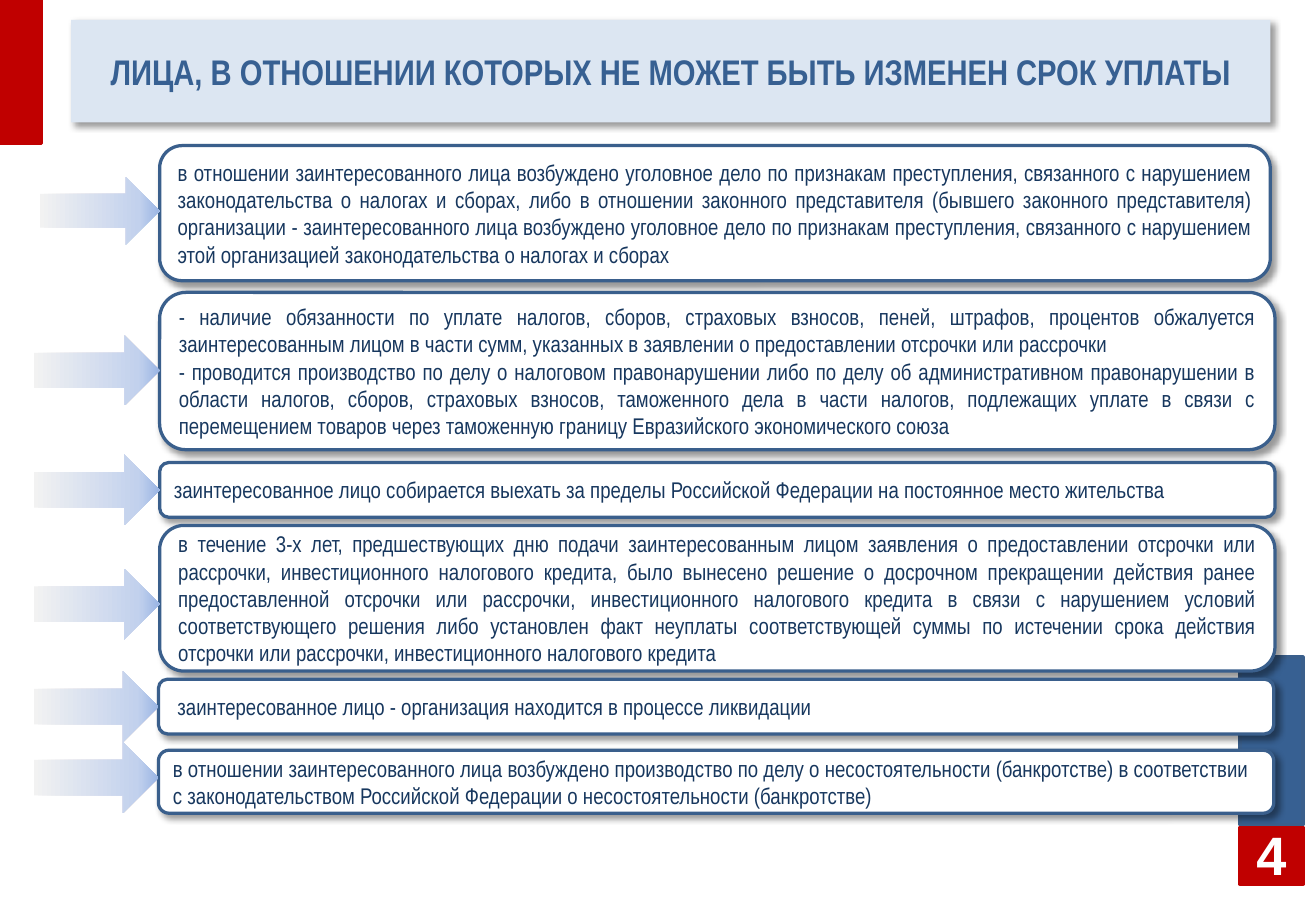
from dataclasses import dataclass

from lxml import etree
from pptx import Presentation
from pptx.dml.color import RGBColor
from pptx.enum.shapes import MSO_SHAPE
from pptx.enum.text import MSO_ANCHOR, MSO_AUTO_SIZE, PP_ALIGN
from pptx.oxml.ns import qn
from pptx.util import Emu, Pt

RECT, ROUND, ARROW = MSO_SHAPE.RECTANGLE, MSO_SHAPE.ROUNDED_RECTANGLE, MSO_SHAPE.RIGHT_ARROW
LEFT, CENTER, JUSTIFY = PP_ALIGN.LEFT, PP_ALIGN.CENTER, PP_ALIGN.JUSTIFY
MIDDLE, NO_FIT = MSO_ANCHOR.MIDDLE, MSO_AUTO_SIZE.NONE

# Content
TITLE = "ЛИЦА, В ОТНОШЕНИИ КОТОРЫХ НЕ МОЖЕТ БЫТЬ ИЗМЕНЕН СРОК УПЛАТЫ"
PAGE = "4"
# box (left, top, width, height), arrow (left, top, height), alignment, left inset, paragraphs
CASES = [
    ((137, 125, 953, 116), (34, 152, 58), JUSTIFY, 10, [
        "в отношении заинтересованного лица возбуждено уголовное дело по признакам "
        "преступления, связанного с нарушением законодательства о налогах и сборах, либо "
        "в отношении законного представителя (бывшего законного представителя) организации "
        "- заинтересованного лица возбуждено уголовное дело по признакам преступления, "
        "связанного с нарушением этой организацией законодательства о налогах и сборах"]),
    ((137, 251, 957, 135), (29, 288, 60), JUSTIFY, 10, [
        "- наличие обязанности по уплате налогов, сборов, страховых взносов, пеней, штрафов, "
        "процентов обжалуется заинтересованным лицом в части сумм, указанных в заявлении "
        "о предоставлении отсрочки или рассрочки",
        "- проводится производство по делу о налоговом правонарушении либо по делу об "
        "административном правонарушении в области налогов, сборов, страховых взносов, "
        "таможенного дела в части налогов, подлежащих уплате в связи с перемещением товаров "
        "через таможенную границу Евразийского экономического союза"]),
    ((137, 397, 957, 47), (29, 390, 61), LEFT, 10, [
        "заинтересованное лицо собирается выехать за пределы Российской Федерации "
        "на постоянное место жительства"]),
    ((137, 451, 957, 125), (29, 488, 61), JUSTIFY, 10, [
        "в течение 3-х лет, предшествующих дню подачи заинтересованным лицом заявления "
        "о предоставлении отсрочки или рассрочки, инвестиционного налогового кредита, было "
        "вынесено решение о досрочном прекращении действия ранее предоставленной отсрочки "
        "или рассрочки, инвестиционного налогового кредита в связи с нарушением условий "
        "соответствующего решения либо установлен факт неуплаты соответствующей суммы "
        "по истечении срока действия отсрочки или рассрочки, инвестиционного налогового "
        "кредита"]),
    ((136, 583, 957, 47), (29, 576, 61), LEFT, 14, [
        "заинтересованное лицо - организация находится в процессе ликвидации"]),
    ((136, 644, 957, 54), (29, 637, 61), LEFT, 10, [
        "в отношении заинтересованного лица возбуждено производство по делу "
        "о несостоятельности (банкротстве) в соответствии с законодательством Российской "
        "Федерации о несостоятельности (банкротстве)"]),
]


@dataclass(frozen=True)
class Theme:
    red: str = "C00000"
    blue: str = "376092"
    border: str = "3A5F8C"
    ink: str = "17375E"
    white: str = "FFFFFF"
    band: str = "DCE6F2"
    arrow: tuple = ((0, "F2F2F2"), (83, "C2D1ED"), (100, "9AB5E4"))
    font: str = "Arial Narrow"
    number_font: str = "Arial"
    title_size: float = 22
    body_size: float = 14
    number_size: float = 33.4
    line: float = 2


T = Theme()
SCALE = 9144  # EMU in one px, 100 px to the inch


def px(n):
    return Emu(n * SCALE)


def rgb(value):
    return RGBColor.from_string(value)


def write(sp, paragraphs, *, size, color, font=T.font, bold=False, align=LEFT,
          left=10, right=10):
    tf = sp.text_frame
    tf.word_wrap, tf.auto_size, tf.vertical_anchor = True, NO_FIT, MIDDLE
    tf.margin_left, tf.margin_right = px(left), px(right)
    tf.margin_top = tf.margin_bottom = px(5)
    for i, text in enumerate(paragraphs):
        p = tf.add_paragraph() if i else tf.paragraphs[0]
        p.alignment = align
        r = p.add_run()
        r.text = text
        r.font.name, r.font.size, r.font.bold = font, Pt(size), bold
        r.font.color.rgb = rgb(color)


def paint(sp, fill, line=None):
    sp.shadow.inherit = False
    sp.fill.solid()
    sp.fill.fore_color.rgb = rgb(fill)
    if line:
        sp.line.color.rgb = rgb(line)
        sp.line.width = Pt(T.line)
    else:
        sp.line.fill.background()


def add_shape(kind, box, fill, line=None):
    sp = slide.shapes.add_shape(kind, *map(px, box))
    paint(sp, fill, line)
    return sp


def cast_shadow(sp):
    effects = sp._element.spPr.find(qn("a:effectLst"))
    shadow = etree.SubElement(effects, qn("a:outerShdw"), blurRad=str(Pt(4)),
                              dist=str(Pt(3)), dir=str(45 * 60000), algn="tl",
                              rotWithShape="0")
    color = etree.SubElement(shadow, qn("a:srgbClr"), val="000000")
    etree.SubElement(color, qn("a:alpha"), val="40000")


def fade(sp, stops):
    sp.fill.gradient()
    sp.fill.gradient_angle = 0
    stop_list = sp._element.spPr.find(qn("a:gradFill")).find(qn("a:gsLst"))
    for old in list(stop_list):
        stop_list.remove(old)
    for position, color in stops:
        gs = etree.SubElement(stop_list, qn("a:gs"), pos=str(position * 1000))
        etree.SubElement(gs, qn("a:srgbClr"), val=color)


prs = Presentation()
prs.slide_width, prs.slide_height = Pt(813), Pt(563)
slide = prs.slides.add_slide(prs.slide_layouts[5])

# Corner blocks and page number
add_shape(RECT, (1064, 564, 54, 144), T.blue, T.border)
add_shape(RECT, (1064, 710, 54, 49), T.red, T.red)
add_shape(RECT, (0, 0, 36, 123), T.red, T.red)
number = slide.shapes.add_textbox(*map(px, (1062, 712, 58, 42)))
write(number, [PAGE], size=T.number_size, color=T.white, font=T.number_font,
      bold=True, align=CENTER, left=0, right=0)

# Title band
title = slide.shapes.title
title.left, title.top, title.width, title.height = map(px, (61, 17, 1029, 88))
paint(title, T.band)
cast_shadow(title)
write(title, [TITLE], size=T.title_size, color=T.blue, bold=True, align=CENTER,
      left=0, right=0)

# Cases, each with an arrow that ends at the left side of its box
for box, (arrow_left, arrow_top, arrow_height), align, inset, paragraphs in CASES:
    sp = add_shape(ROUND, box, T.white, T.border)
    cast_shadow(sp)
    write(sp, paragraphs, size=T.body_size, color=T.ink, align=align, left=inset)
    arrow = add_shape(ARROW, (arrow_left, arrow_top, box[0] - arrow_left, arrow_height),
                      T.white)
    fade(arrow, T.arrow)

prs.save("out.pptx")
